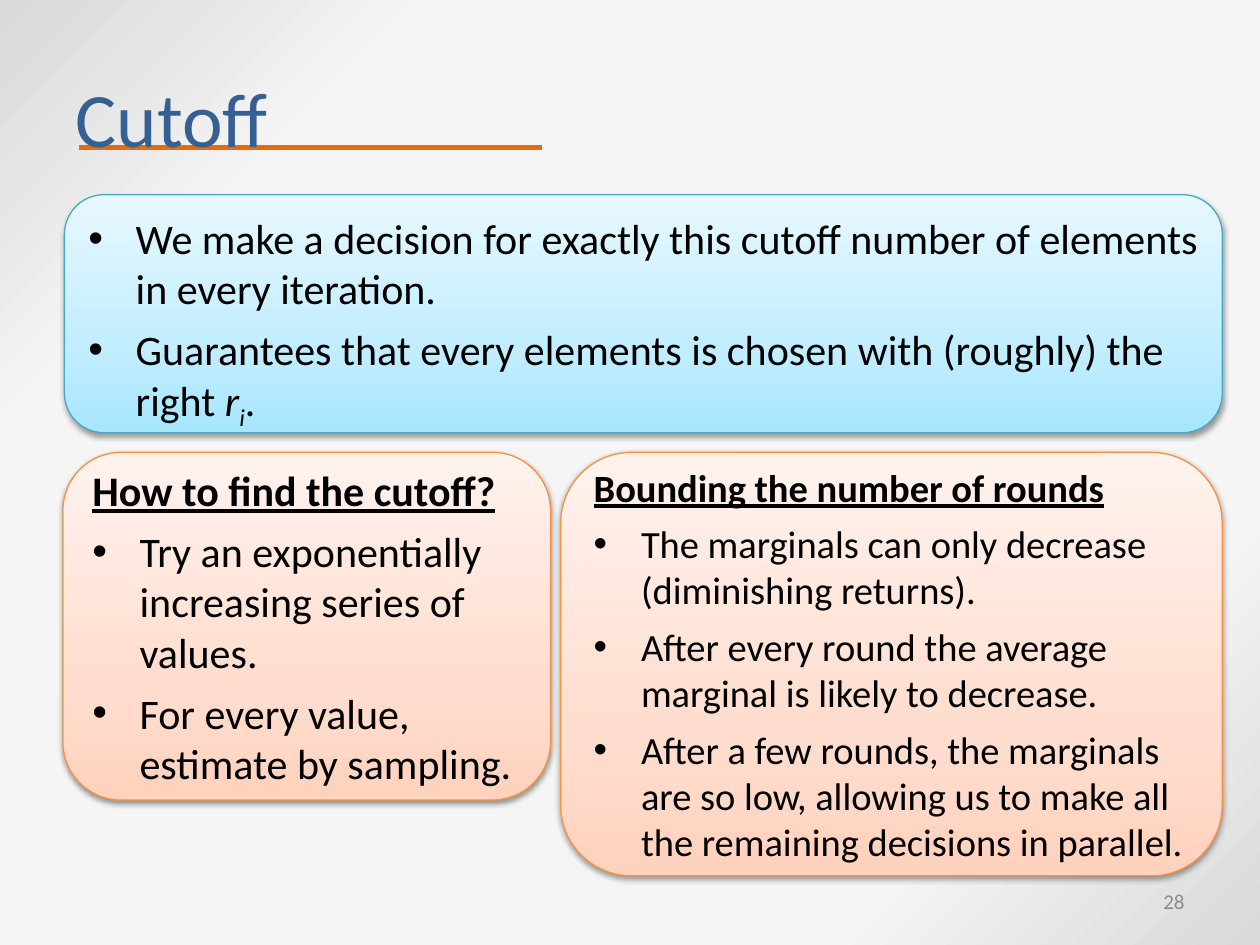
from lxml import etree
from pptx import Presentation
from pptx.dml.color import RGBColor
from pptx.enum import shapes, text
from pptx.oxml import ns
from pptx.util import Pt

FONT = "Calibri"
BLACK = "000000"
PEACH = [(0, "FFD2BD"), (35, "FFDED0"), (100, "FFF2ED")]
BLUE = [(0, "A7E6FF"), (35, "C1EDFF"), (100, "E7F8FF")]
GREY = [(0, "D9D9D9"), (20, "F5F5F5"), (80, "F5F5F5"), (100, "D9D9D9")]
INDENT = 27


def rgb(color):
    return RGBColor.from_string(color)


def add_xml(parent, tag, **attrs):
    return etree.SubElement(parent, ns.qn(tag), {k: str(v) for k, v in attrs.items()})


def set_gradient(fill, root, stops, angle):
    """Fill with any number of (percent, colour) stops; angle runs clockwise."""
    fill.gradient()
    grad = root.find(".//" + ns.qn("a:gradFill"))
    for child in list(grad):
        grad.remove(child)
    stop_list = add_xml(grad, "a:gsLst")
    for percent, color in stops:
        stop = add_xml(stop_list, "a:gs", pos=percent * 1000)
        add_xml(stop, "a:srgbClr", val=color)
    add_xml(grad, "a:lin", ang=angle * 60000, scaled=0)


def set_soft_shadow(sp):
    sp.shadow.inherit = False
    effects = sp._element.spPr.find(ns.qn("a:effectLst"))
    shadow = add_xml(effects, "a:outerShdw", blurRad=Pt(3.1), dist=Pt(1.6),
                     dir=90 * 60000, rotWithShape=0)
    add_xml(add_xml(shadow, "a:srgbClr", val=BLACK), "a:alpha", val=38000)


def style(p, size, color, align=text.PP_ALIGN.LEFT):
    p.alignment = align
    p.font.name = FONT
    p.font.size = Pt(size)
    p.font.color.rgb = rgb(color)


def add_bullet(p):
    pPr = p._p.get_or_add_pPr()
    pPr.set("marL", str(Pt(INDENT)))
    pPr.set("indent", str(-Pt(INDENT)))
    add_xml(pPr, "a:buFont", typeface="Arial")
    add_xml(pPr, "a:buChar", char="•")


def add_title(slide, box, title):
    left, top, width, height = box
    sp = slide.shapes.title
    sp.left, sp.top, sp.width, sp.height = map(Pt, box)
    tf = sp.text_frame
    tf.text = title
    tf.vertical_anchor = text.MSO_ANCHOR.MIDDLE
    style(tf.paragraphs[0], 44, "376092")

    x, y = left + 9, top + 62.5
    rule = slide.shapes.add_connector(shapes.MSO_CONNECTOR.STRAIGHT,
                                      Pt(x), Pt(y), Pt(x + 265), Pt(y))
    rule.line.color.rgb = rgb("E46C0A")
    rule.line.width = Pt(3)
    add_xml(rule._element.spPr, "a:effectLst")
    sp._element.addprevious(rule._element)


def add_card(slide, box, stops, line, size, bullets, heading=None,
             anchor=text.MSO_ANCHOR.MIDDLE):
    """Rounded card with an optional heading; a bullet is a list of (text, format)."""
    sp = slide.shapes.add_shape(shapes.MSO_SHAPE.ROUNDED_RECTANGLE, *map(Pt, box))
    set_gradient(sp.fill, sp._element.spPr, stops, 270)
    sp.line.color.rgb = rgb(line)
    sp.line.width = Pt(0.75)
    set_soft_shadow(sp)
    tf = sp.text_frame
    tf.word_wrap = True
    tf.vertical_anchor = anchor

    rows = ([[(heading, "heading")]] if heading else []) + bullets
    for i, runs in enumerate(rows):
        p = tf.paragraphs[0] if i == 0 else tf.add_paragraph()
        p.space_after = Pt(6)
        is_heading = runs[0][1] == "heading"
        if not is_heading:
            add_bullet(p)
        style(p, size, BLACK)
        for words, kind in runs:
            r = p.add_run()
            r.text = words
            if is_heading:
                r.font.bold = r.font.underline = True
            if kind in ("italic", "subscript"):
                r.font.italic = True
            if kind == "subscript":
                r.font._element.set("baseline", "-25000")


def add_page_number(slide, box, number):
    tf = slide.shapes.add_textbox(*map(Pt, box)).text_frame
    tf.word_wrap = True
    tf.vertical_anchor = text.MSO_ANCHOR.MIDDLE
    tf.text = number
    style(tf.paragraphs[0], 12, "8C8C8C", text.PP_ALIGN.RIGHT)


def plain(*lines):
    return [[(line, None)] for line in lines]


def main():
    prs = Presentation()
    prs.slide_width, prs.slide_height = Pt(720), Pt(540)
    slide = prs.slides.add_slide(prs.slide_layouts[5])
    set_gradient(slide.background.fill, slide._element, GREY, 45)

    add_title(slide, (36, 21.6, 648, 90), "Cutoff")
    add_page_number(slide, (516, 500.5, 168, 28.75), "28")
    add_card(slide, (36, 258.5, 278.6, 198.7), PEACH, "F69240", 24,
             plain("Try an exponentially increasing series of values.",
                   "For every value, estimate by sampling."),
             heading="How to find the cutoff?")
    add_card(slide, (320.4, 258.5, 378, 242), PEACH, "F69240", 22,
             plain("The marginals can only decrease (diminishing returns).",
                   "After every round the average marginal is likely to decrease.",
                   "After a few rounds, the marginals are so low, allowing us to make all "
                   "the remaining decisions in parallel."),
             heading="Bounding the number of rounds")
    decision = plain("We make a decision for exactly this cutoff number of elements "
                     "in every iteration.")
    guarantee = [("Guarantees that every elements is chosen with (roughly) the right ", None),
                 ("r", "italic"), ("i", "subscript"), (".", None)]
    add_card(slide, (36.8, 111.3, 661.7, 136), BLUE, "46AAC5", 24,
             decision + [guarantee], anchor=text.MSO_ANCHOR.TOP)
    prs.save("out.pptx")


if __name__ == "__main__":
    main()
